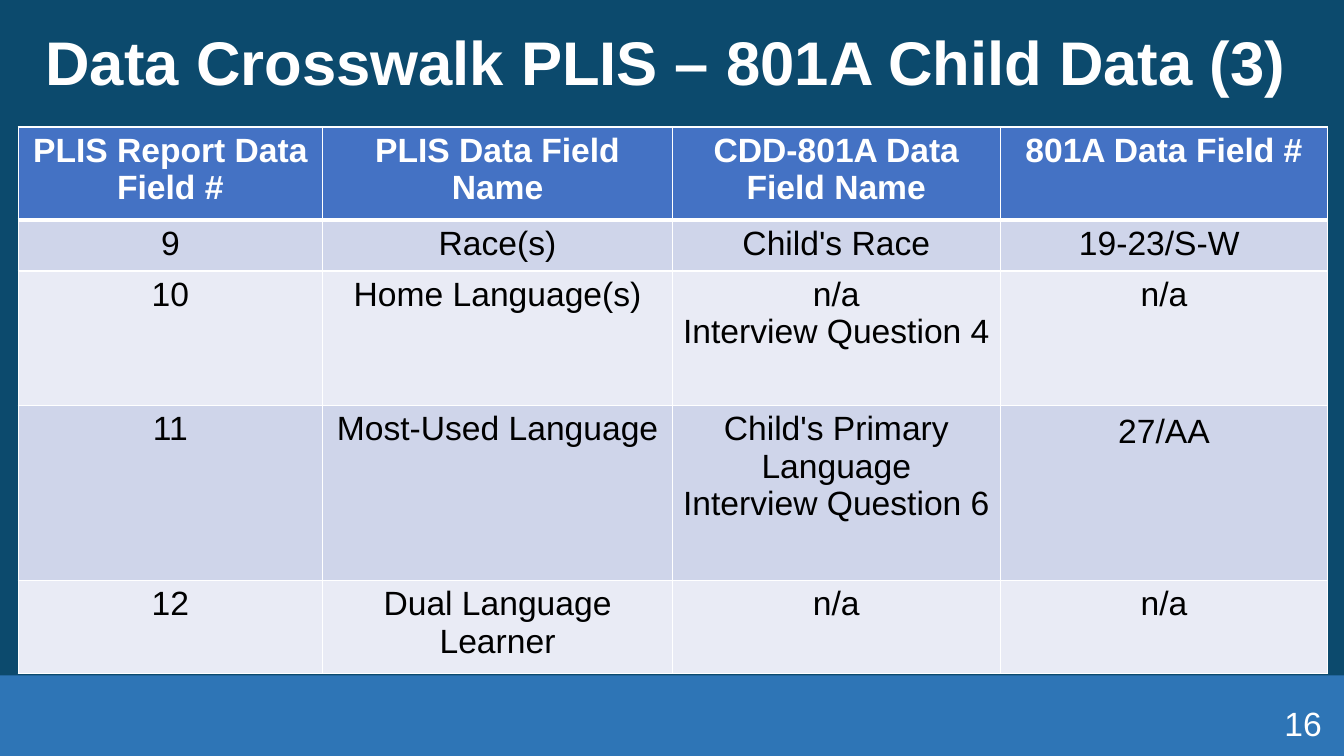
from lxml import etree
from pptx import Presentation
from pptx.dml.color import RGBColor
from pptx.enum.shapes import MSO_SHAPE
from pptx.enum.text import MSO_ANCHOR, PP_ALIGN
from pptx.oxml.ns import qn
from pptx.util import Inches, Pt

RECTANGLE = MSO_SHAPE.RECTANGLE
TOP, MIDDLE, BOTTOM = MSO_ANCHOR.TOP, MSO_ANCHOR.MIDDLE, MSO_ANCHOR.BOTTOM
CENTER, RIGHT = PP_ALIGN.CENTER, PP_ALIGN.RIGHT

TITLE = "Data Crosswalk PLIS – 801A Child Data (3)"
PAGE_NUMBER = "16"
HEADERS = ["PLIS Report Data Field #", "PLIS Data Field Name",
           "CDD-801A Data Field Name", "801A Data Field #"]
FIELDS = [
    ["9", "Race(s)", "Child's Race", "19-23/S-W "],
    ["10", "Home Language(s)", "n/a\nInterview Question 4", "n/a"],
    ["11", "Most-Used Language",
     "Child's Primary Language\nInterview Question 6", "27/AA"],
    ["12", "Dual Language Learner", "n/a", "n/a"],
]
SPACED_CELLS = {(3, 3): {"line_spacing": 1.07, "space_after": 8}}

THEME = {
    "font": "Arial", "title_size": 44, "body_size": 24,
    "background": "0C4A6D", "footer": "2E75B6", "header": "4472C4",
    "bands": ["CFD5EA", "E9EBF5"], "light": "FFFFFF", "dark": "000000",
}

SLIDE_WIDTH, SLIDE_HEIGHT = 13.33, 7.5
FOOTER_TOP, FOOTER_HEIGHT = 6.7, 0.8
TABLE_LEFT, TABLE_TOP = 0.18, 1.26
COLUMN_WIDTHS = [3.02, 3.47, 3.25, 3.25]
ROW_HEIGHTS = [0.92, 0.51, 1.33, 1.74, 0.92]
THIN, THICK = 1, 3


def color(value):
    return RGBColor.from_string(value)


def write_text(frame, text, size=THEME["body_size"], text_color=THEME["light"],
               bold=False, align=CENTER, line_spacing=None, space_after=None):
    frame.word_wrap = True
    for index, line in enumerate(text.split("\n")):
        paragraph = frame.paragraphs[0] if index == 0 else frame.add_paragraph()
        paragraph.alignment = align
        if line_spacing is not None:
            paragraph.line_spacing = line_spacing
        if space_after is not None:
            paragraph.space_after = Pt(space_after)
        run = paragraph.add_run()
        run.text = line
        run.font.name = THEME["font"]
        run.font.size = Pt(size)
        run.font.bold = bold
        run.font.color.rgb = color(text_color)


def add_label(slide, box, text, anchor, margin=None, **text_format):
    shape = slide.shapes.add_textbox(*map(Inches, box))
    frame = shape.text_frame
    frame.vertical_anchor = anchor
    if margin is not None:
        frame.margin_left = frame.margin_right = Inches(margin)
        frame.margin_top = frame.margin_bottom = Inches(margin)
    write_text(frame, text, **text_format)


def set_borders(cell, widths):
    properties = cell._tc.get_or_add_tcPr()
    for side, width in widths.items():
        line = etree.SubElement(properties, qn(f"a:ln{side}"), w=str(Pt(width)))
        fill = etree.SubElement(line, qn("a:solidFill"))
        etree.SubElement(fill, qn("a:srgbClr"), val=THEME["light"])


def add_footer(slide):
    box = (0, FOOTER_TOP, SLIDE_WIDTH, FOOTER_HEIGHT)
    footer = slide.shapes.add_shape(RECTANGLE, *map(Inches, box))
    footer.shadow.inherit = False
    footer.fill.solid()
    footer.fill.fore_color.rgb = color(THEME["footer"])
    footer.line.fill.background()


def add_crosswalk(slide):
    rows = [HEADERS] + FIELDS
    box = (TABLE_LEFT, TABLE_TOP, sum(COLUMN_WIDTHS), sum(ROW_HEIGHTS))
    table = slide.shapes.add_table(len(rows), len(HEADERS), *map(Inches, box)).table
    for column, width in zip(table.columns, COLUMN_WIDTHS):
        column.width = Inches(width)
    for row, height in zip(table.rows, ROW_HEIGHTS):
        row.height = Inches(height)
    for row_index, values in enumerate(rows):
        is_header = row_index == 0
        band = THEME["bands"][(row_index - 1) % 2]
        borders = {"L": THIN, "R": THIN,
                   "T": THICK if row_index == 1 else THIN,
                   "B": THICK if is_header else THIN}
        for column_index, value in enumerate(values):
            cell = table.cell(row_index, column_index)
            cell.vertical_anchor = TOP
            set_borders(cell, borders)
            cell.fill.solid()
            cell.fill.fore_color.rgb = color(THEME["header"] if is_header else band)
            write_text(cell.text_frame, value, bold=is_header,
                       text_color=THEME["light"] if is_header else THEME["dark"],
                       **SPACED_CELLS.get((row_index, column_index), {}))


def main():
    presentation = Presentation()
    presentation.slide_width = Inches(SLIDE_WIDTH)
    presentation.slide_height = Inches(SLIDE_HEIGHT)
    slide = presentation.slides.add_slide(presentation.slide_layouts[6])
    slide.background.fill.solid()
    slide.background.fill.fore_color.rgb = color(THEME["background"])
    add_footer(slide)
    add_label(slide, (0.11, -0.07, 13, 1.44), TITLE, MIDDLE,
              size=THEME["title_size"], bold=True, line_spacing=0.9)
    add_crosswalk(slide)
    add_label(slide, (12.12, 6.91, 0.99, 0.46), PAGE_NUMBER, BOTTOM,
              margin=0, align=RIGHT)
    presentation.save("out.pptx")


if __name__ == "__main__":
    main()
